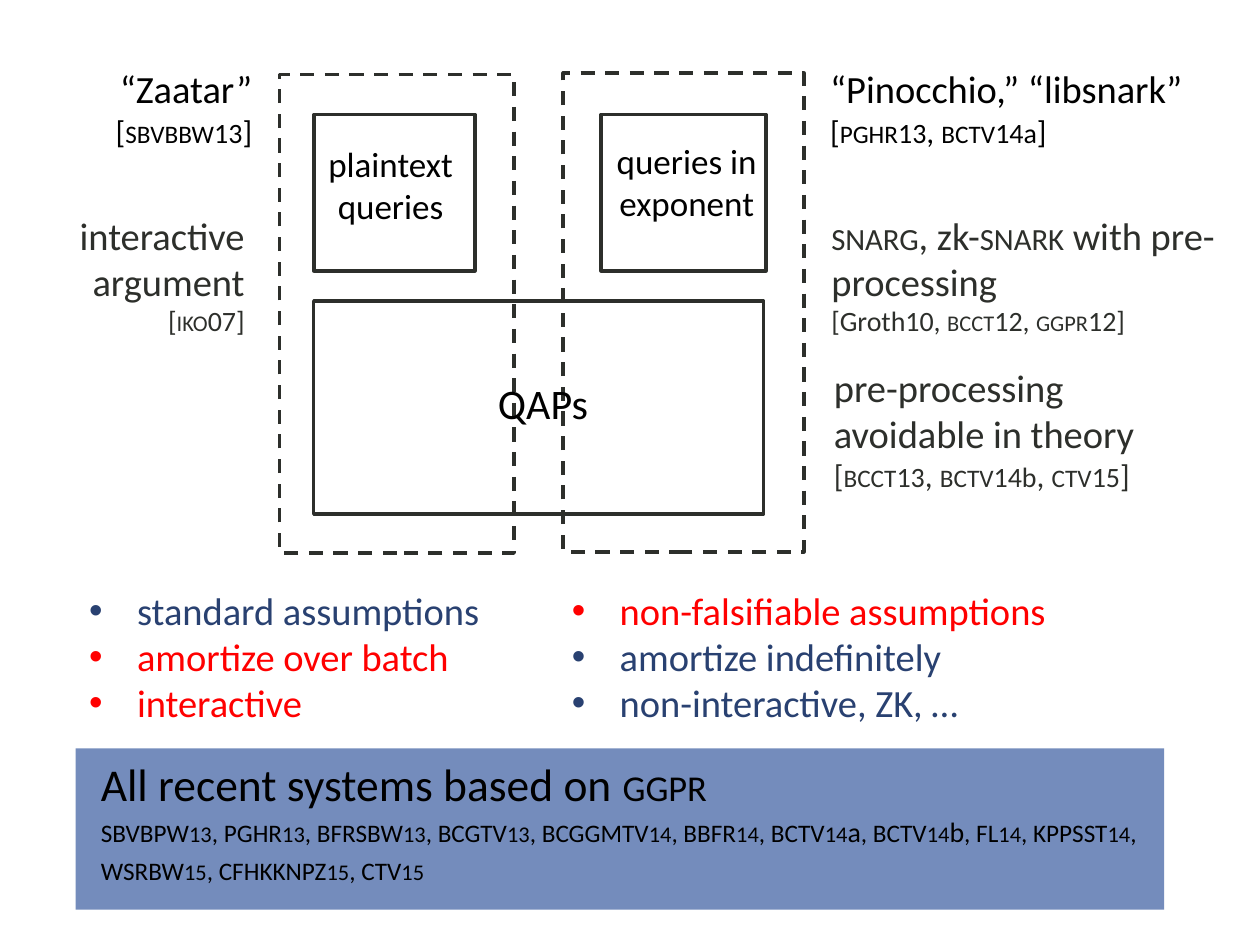
from lxml import etree
from pptx import Presentation
from pptx.dml.color import RGBColor
from pptx.enum.dml import MSO_LINE
from pptx.enum.shapes import MSO_SHAPE
from pptx.enum.text import MSO_ANCHOR, MSO_AUTO_SIZE, PP_ALIGN
from pptx.oxml.ns import qn
from pptx.util import Inches, Pt

RECT = MSO_SHAPE.RECTANGLE
DASH = MSO_LINE.DASH
MIDDLE = MSO_ANCHOR.MIDDLE
GROW = MSO_AUTO_SIZE.SHAPE_TO_FIT_TEXT
LEFT, CENTER, RIGHT = PP_ALIGN.LEFT, PP_ALIGN.CENTER, PP_ALIGN.RIGHT
BLACK = RGBColor(0x00, 0x00, 0x00)
DARK = RGBColor(0x2D, 0x2F, 0x2B)
NAVY = RGBColor(0x29, 0x41, 0x71)
RED = RGBColor(0xFF, 0x00, 0x00)
BLUE = RGBColor(0x74, 0x8C, 0xBC)
SMALL = True


def add_runs(p, runs, color):
    for text, size, *small in runs:
        r = p.add_run()
        r.text = text
        for name, value in {"name": "Calibri", "size": Pt(size)}.items():
            setattr(r.font, name, value)
        r.font.color.rgb = color
        if small:
            r.font._element.set("cap", "small")


def add_text(box, paragraphs, align, color):
    tf = s.shapes.add_textbox(*map(Inches, box)).text_frame
    tf.word_wrap = True
    tf.auto_size = GROW
    for i, runs in enumerate(paragraphs):
        p = tf.paragraphs[0] if i == 0 else tf.add_paragraph()
        p.alignment = align
        add_runs(p, runs, color)
    return tf


prs = Presentation()
prs.slide_width, prs.slide_height = Inches(10), Inches(7.5)
s = prs.slides.add_slide(prs.slide_layouts[6])

frames = [
    ((2.49, 2.39, 3.57, 1.69), None),
    ((2.49, 0.91, 1.28, 1.24), None),
    ((4.77, 0.91, 1.31, 1.24), None),
    ((2.22, 0.59, 1.86, 3.8), DASH),
    ((4.47, 0.58, 1.91, 3.8), DASH),
]
for box, dash in frames:
    sp = s.shapes.add_shape(RECT, *map(Inches, box))
    sp.shadow.inherit = False
    sp.fill.background()
    sp.line.color.rgb = DARK
    sp.line.width = Pt(2)
    if dash:
        sp.line.dash_style = dash

traits = [
    ((0.61, 4.61, 4, 1.21), [("standard assumptions", NAVY),
                             ("amortize over batch", RED),
                             ("interactive", RED)]),
    ((4.44, 4.61, 4.91, 1.21), [("non-falsifiable assumptions", RED),
                                ("amortize indefinitely", NAVY),
                                ("non-interactive, ZK, …", NAVY)]),
]
for box, items in traits:
    tf = add_text(box, [[(text, 22)] for text, color in items], LEFT, NAVY)
    for p, (text, color) in zip(tf.paragraphs, items):
        p.runs[0].font.color.rgb = color
        pPr = p._p.get_or_add_pPr()
        pPr.set("marL", str(Inches(0.38)))
        pPr.set("indent", str(-Inches(0.38)))
        etree.SubElement(pPr, qn("a:buFont")).set("typeface", "Arial")
        etree.SubElement(pPr, qn("a:buChar")).set("char", "•")

labels = [
    ((2.49, 1.08, 1.22, 0.77), CENTER, BLACK, [[("plaintext queries", 20)]]),
    ((2.58, 2.95, 3.46, 0.5), CENTER, BLACK, [[("QAPs", 24)]]),
    ((4.69, 1.06, 1.52, 0.77), CENTER, BLACK, [[("queries in exponent", 20)]]),
    ((6.49, 0.47, 3.51, 0.77), LEFT, BLACK, [
        [("“Pinocchio,” “libsnark”", 22)],
        [("[", 18), ("pghr", 18, SMALL), ("13", 16), (", ", 18),
         ("bctv", 18, SMALL), ("14a", 16), ("]", 18)]]),
    ((0.24, 0.47, 1.86, 0.77), RIGHT, BLACK, [
        [("“Zaatar”", 22)],
        [("[", 18), ("sbvbbw", 18, SMALL), ("13", 16), ("]", 18)]]),
    ((0.3, 1.63, 1.74, 1.11), RIGHT, DARK, [
        [("interactive argument", 22)],
        [("[", 16), ("iko", 16, SMALL), ("07]", 16)]]),
    ((6.5, 1.63, 3.5, 1.11), LEFT, DARK, [
        [("snarg", 22, SMALL), (", zk-", 22), ("snark", 22, SMALL),
         (" with pre-processing", 22)],
        [("[Groth10, ", 16), ("bcct", 16, SMALL), ("12, ", 16),
         ("ggpr", 16, SMALL), ("12]", 16)]]),
    ((6.52, 2.84, 2.99, 1.14), LEFT, DARK, [
        [("pre-processing", 22)],
        [("avoidable in theory ", 22), ("[", 18), ("bcct", 18, SMALL),
         ("13", 16), (", ", 18), ("bctv", 18, SMALL), ("14b", 16),
         (", ", 18), ("ctv", 18, SMALL), ("15", 16), ("]", 18)]]),
]
for box, align, color, paragraphs in labels:
    add_text(box, paragraphs, align, color)

sp = s.shapes.add_shape(RECT, *map(Inches, (0.6, 5.94, 8.64, 1.28)))
sp.shadow.inherit = False
sp.fill.solid()
sp.fill.fore_color.rgb = BLUE
sp.line.fill.background()
tf = sp.text_frame
banner_format = {
    "word_wrap": True, "vertical_anchor": MIDDLE,
    "margin_left": Inches(0.2), "margin_top": 0,
    "margin_right": 0, "margin_bottom": Inches(0.12),
}
for name, value in banner_format.items():
    setattr(tf, name, value)

p = tf.paragraphs[0]
p.alignment = LEFT
p.space_before = Pt(16.9)
add_runs(p, [("All recent systems based on ", 26), ("ggpr", 26, SMALL)], BLACK)

systems = [
    ("sbvbpw", "13", ""), ("pghr", "13", ""), ("bfrsbw", "13", ""),
    ("bcgtv", "13", ""), ("bcggmtv", "14", ""), ("bbfr", "14", ""),
    ("bctv", "14", "a"), ("bctv", "14", "b"), ("fl", "14", ""),
    ("kppsst", "14", ""), ("wsrbw", "15", ""), ("cfhkknpz", "15", ""),
    ("ctv", "15", ""),
]
p = tf.add_paragraph()
p.alignment = LEFT
for i, (authors, year, suffix) in enumerate(systems):
    lead = ", " if i else ""
    add_runs(p, [(lead + authors, 18, SMALL), (year, 16, SMALL)], BLACK)
    if suffix:
        add_runs(p, [(suffix, 16)], BLACK)

prs.save("out.pptx")
